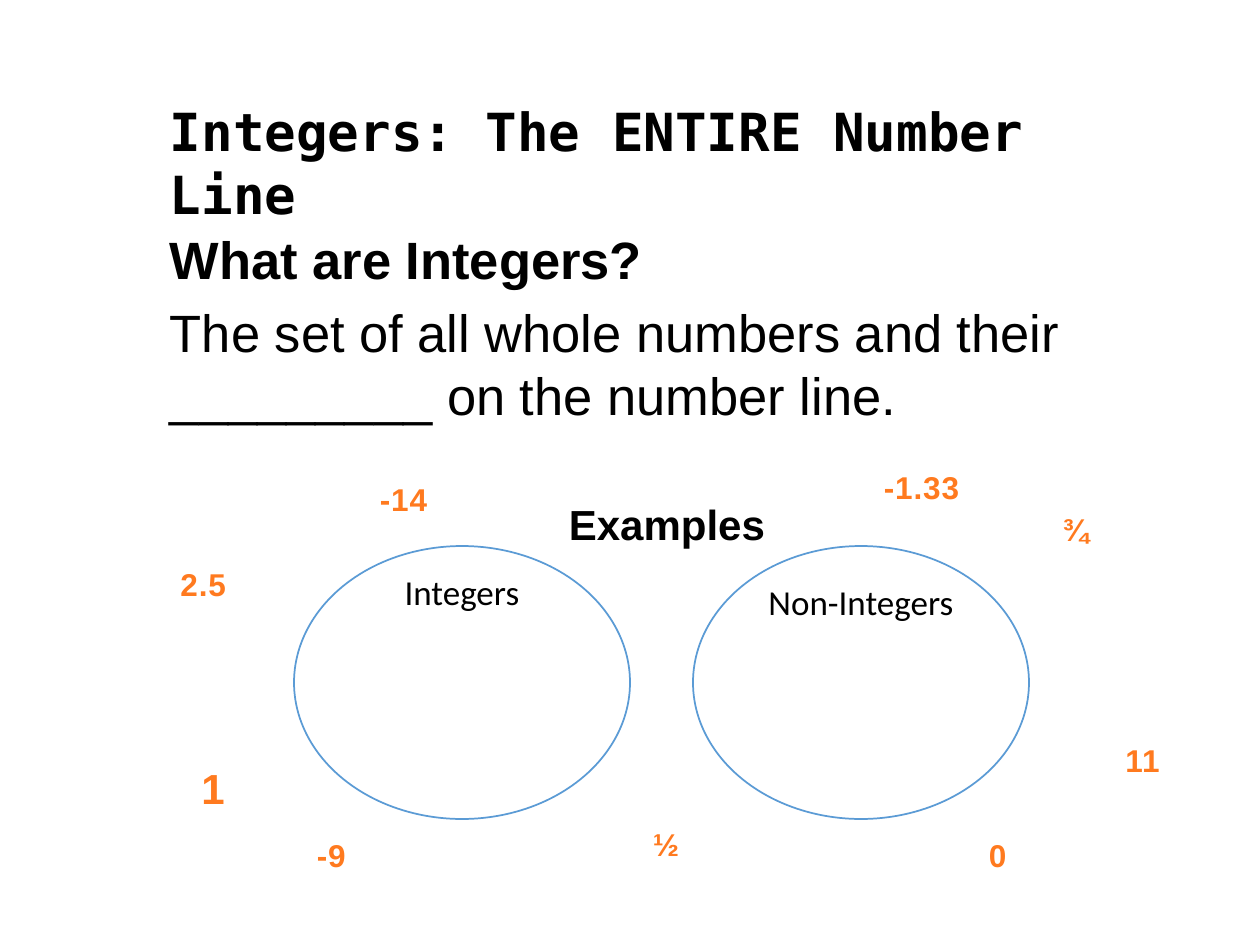
from pptx import Presentation, util as u
from pptx.dml.color import RGBColor
from pptx.enum import shapes, text

BLACK = RGBColor(0, 0, 0)
WHITE = RGBColor(255, 255, 255)
BLUE = RGBColor(0x5B, 0x9B, 0xD5)
ORANGE = RGBColor(0xFF, 0x7A, 0x1F)
CELL = u.Inches(1) / 12  # the grid has 120 columns and 90 rows


class Sheet:
    """Holds the style and the slide; places are in grid cells."""

    def __init__(self, deck):
        self.slide = deck.slides.add_slide(deck.slide_layouts[6])

    def place(self, *cells):
        return [round(n * CELL) for n in cells]

    def style(self, para, size, face="Arial", color=BLACK, bold=True):
        font = para.font
        font.name, font.size, font.bold = face, u.Pt(size), bold
        font.color.rgb = color

    def box(self, words, x, y, w, h, wrap=True):
        frame = self.slide.shapes.add_textbox(*self.place(x, y, w, h)).text_frame
        frame.word_wrap = wrap
        frame.auto_size = text.MSO_AUTO_SIZE.SHAPE_TO_FIT_TEXT
        frame.text = words
        return frame.paragraphs

    def number(self, words, x, y, w, h=4.8, size=18, wrap=False):
        para = self.box(words, x, y, w, h, wrap)[0]
        self.style(para, size, color=ORANGE)
        para.runs[0]._r.get_or_add_rPr().set("spc", "50")
        return para

    def oval(self, words, x, rest):
        """Draw a set; rest is the empty space in cells below its label."""
        oval = self.slide.shapes.add_shape(
            shapes.MSO_SHAPE.OVAL, *self.place(x, 52, 32, 26))
        oval.shadow.inherit = False
        oval.fill.solid()
        oval.fill.fore_color.rgb = WHITE
        oval.line.color.rgb = BLUE
        oval.line.width = u.Pt(1)
        frame = oval.text_frame
        frame.text = words
        frame.vertical_anchor = text.MSO_ANCHOR.MIDDLE
        frame.margin_top = 0
        frame.margin_bottom = self.place(rest)[0]
        para = frame.paragraphs[0]
        para.alignment = text.PP_ALIGN.CENTER
        self.style(para, 20, "Calibri", bold=False)


def main():
    deck = Presentation()
    deck.slide_width, deck.slide_height = u.Inches(10), u.Inches(7.5)
    sheet = Sheet(deck)

    title = sheet.box("Integers: The ENTIRE Number Line", 15, 8.8, 97, 7.2)
    sheet.style(title[0], 30, "DejaVu Sans Mono")
    ask, answer = sheet.box(
        "What are Integers?\nThe set of all whole numbers and their "
        "_________ on the number line.", 15, 21, 103, 20.4)
    sheet.style(ask, 30)
    ask.space_after = u.Pt(6)
    sheet.style(answer, 30, bold=False)

    sheet.oval("Integers", 28, 17.4)
    sheet.oval("Non-Integers", 66, 15.5)

    one = sheet.number("1", 18, 72, 2.8, 6, size=24, wrap=True)
    one.alignment = text.PP_ALIGN.CENTER
    sheet.number("-9", 29, 79, 6, wrap=True)
    for words, x, y, w in [
            ("2.5", 16, 53.2, 6.8), ("½", 61, 78, 6), ("-14", 35, 45.1, 7.1),
            ("¾", 100, 48, 6), ("11", 106, 70, 5.8), ("0", 93, 79, 4.2),
            ("-1.33", 83, 44, 9.7)]:
        sheet.number(words, x, y, w)

    sheet.style(sheet.box("Examples", 53, 46.9, 22, 6.1)[0], 24)
    deck.save("out.pptx")


if __name__ == "__main__":
    main()
